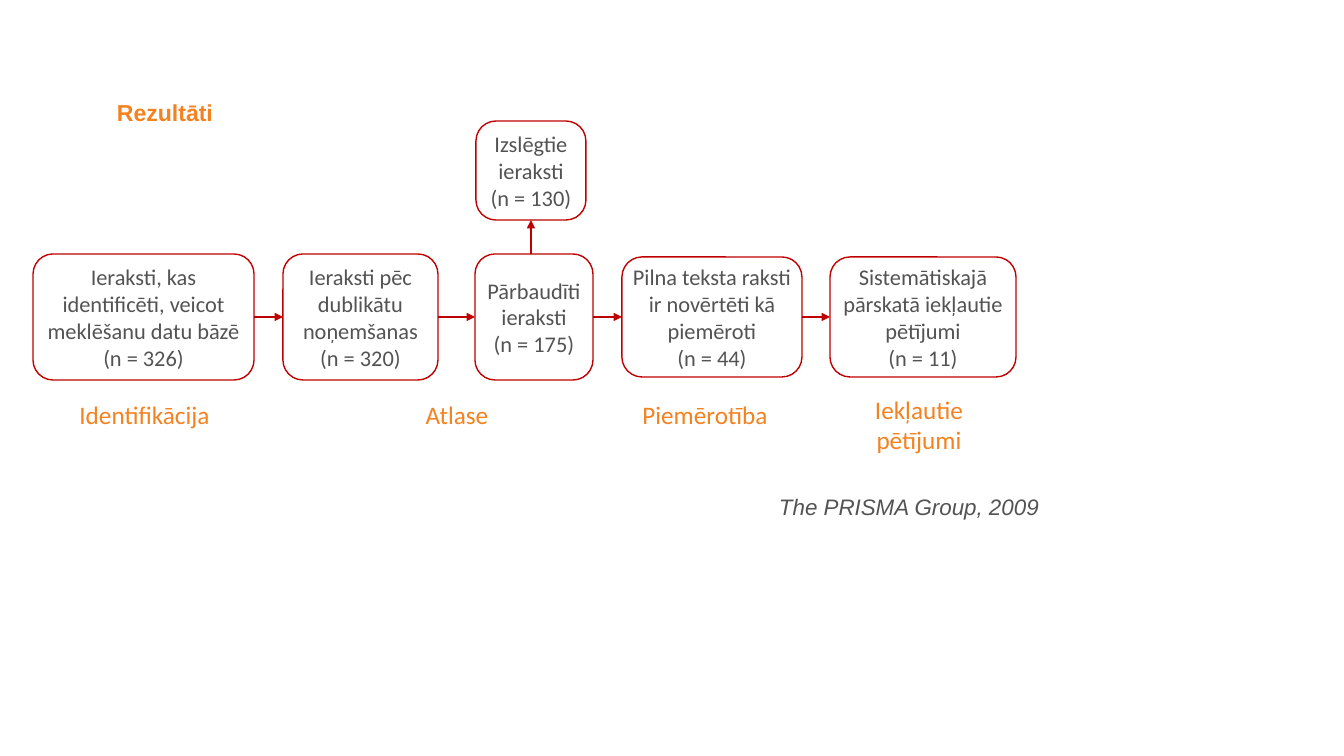
from dataclasses import dataclass

from lxml import etree
from pptx import Presentation, util as u
from pptx.dml.color import RGBColor
from pptx.enum import shapes, text
from pptx.oxml import ns

EMU_PER_PX = 12192000 / 1344
TOP, LEFT, BOTTOM, RIGHT = range(4)


@dataclass(frozen=True)
class Theme:
    paper: RGBColor = RGBColor.from_string("FFFFFF")
    ink: RGBColor = RGBColor.from_string("535353")
    accent: RGBColor = RGBColor.from_string("F58220")
    outline: RGBColor = RGBColor.from_string("C00000")
    heading_font: str = "Arial"
    diagram_font: str = "Calibri"
    title_size: float = 16.5
    body_size: int = 16
    label_size: int = 18
    line_width: int = 1
    padding: int = 5
    corner: int = 20


def px(*lengths):
    return [u.Emu(round(length * EMU_PER_PX)) for length in lengths]


class FlowSlide:
    def __init__(self, slide, theme):
        self.shapes = slide.shapes
        self.theme = theme

    def set_text(self, holder, lines, padding, color, align=None, spacing=None, **font):
        frame = holder.text_frame
        frame.word_wrap = True
        for side in ("left", "top", "right", "bottom"):
            setattr(frame, f"margin_{side}", px(padding)[0])
        frame.text = "\n".join(lines)
        for paragraph in frame.paragraphs:
            paragraph.alignment = align
            paragraph.line_spacing = spacing
            paragraph.font.color.rgb = color
            for name, value in font.items():
                setattr(paragraph.font, name, value)

    def caption(self, place, words, **style):
        self.set_text(self.shapes.add_textbox(*px(*place)), [words], 0,
                      name=self.theme.heading_font, **style)

    def panel(self, preset, place, lines, color, size):
        """Add a filled, centred shape without an outline."""
        panel = self.shapes.add_shape(preset, *px(*place))
        panel.shadow.inherit = False
        panel.fill.solid()
        panel.fill.fore_color.rgb = self.theme.paper
        panel.line.fill.background()
        panel.text_frame.vertical_anchor = text.MSO_ANCHOR.MIDDLE
        self.set_text(panel, lines, self.theme.padding, color, text.PP_ALIGN.CENTER,
                      name=self.theme.diagram_font, size=u.Pt(size))
        return panel

    def step(self, place, wording, count):
        step = self.panel(shapes.MSO_SHAPE.ROUNDED_RECTANGLE, place,
                          [wording, f"(n = {count})"],
                          self.theme.ink, self.theme.body_size)
        step.adjustments[0] = self.theme.corner / min(place[2:])
        self.outline(step.line)
        return step

    def label(self, place, wording):
        self.panel(shapes.MSO_SHAPE.RECTANGLE, place, [wording],
                   self.theme.accent, self.theme.label_size)

    def outline(self, line):
        line.color.rgb = self.theme.outline
        line.width = u.Pt(self.theme.line_width)

    def arrow(self, start, end, source=None, target=None):
        """Draw an arrow; source and target are (shape, side) pairs to join."""
        arrow = self.shapes.add_connector(shapes.MSO_CONNECTOR.STRAIGHT,
                                          *px(*start, *end))
        if source:
            arrow.begin_connect(*source)
        if target:
            arrow.end_connect(*target)
        self.outline(arrow.line)
        properties = arrow._element.spPr
        etree.SubElement(properties.find(ns.qn("a:ln")), ns.qn("a:tailEnd"),
                         type="triangle")
        etree.SubElement(properties, ns.qn("a:effectLst"))


STEPS = [
    ((33, 254, 221, 126), "Ieraksti, kas identificēti, veicot meklēšanu datu bāzē", 326),
    ((283, 254, 155, 126), "Ieraksti pēc dublikātu noņemšanas", 320),
    ((475, 254, 118, 126), "Pārbaudīti ieraksti", 175),
    ((622, 257, 180, 120), "Pilna teksta raksti ir novērtēti kā piemēroti", 44),
    ((830, 257, 186, 120), "Sistemātiskajā pārskatā iekļautie pētījumi", 11),
]
EXCLUDED = ((476, 121, 110, 99), "Izslēgtie ieraksti", 130)
PHASES = [
    ((69, 386, 151, 56), "Identifikācija"),
    ((387, 386, 140, 56), "Atlase"),
    ((635, 386, 140, 56), "Piemērotība"),
    ((849, 386, 140, 77), "Iekļautie pētījumi"),
]


def main():
    deck = Presentation()
    deck.slide_width, deck.slide_height = px(1344, 756)
    theme = Theme()
    flow = FlowSlide(deck.slides.add_slide(deck.slide_layouts[6]), theme)

    flow.caption((117, 98, 263, 40), "Rezultāti", color=theme.accent,
                 size=u.Pt(theme.title_size), bold=True)
    steps = [flow.step(*step) for step in STEPS]
    excluded = flow.step(*EXCLUDED)
    for phase in PHASES:
        flow.label(*phase)

    flow.arrow((531, 254), (531, 220), target=(excluded, BOTTOM))
    for source, target in zip(steps, steps[1:]):
        flow.arrow((0, 0), (0, 0), (source, RIGHT), (target, LEFT))

    flow.caption((779, 496, 280, 33), "The PRISMA Group, 2009", color=theme.ink,
                 size=u.Pt(theme.body_size), italic=True, spacing=0.9)
    deck.save("out.pptx")


if __name__ == "__main__":
    main()
